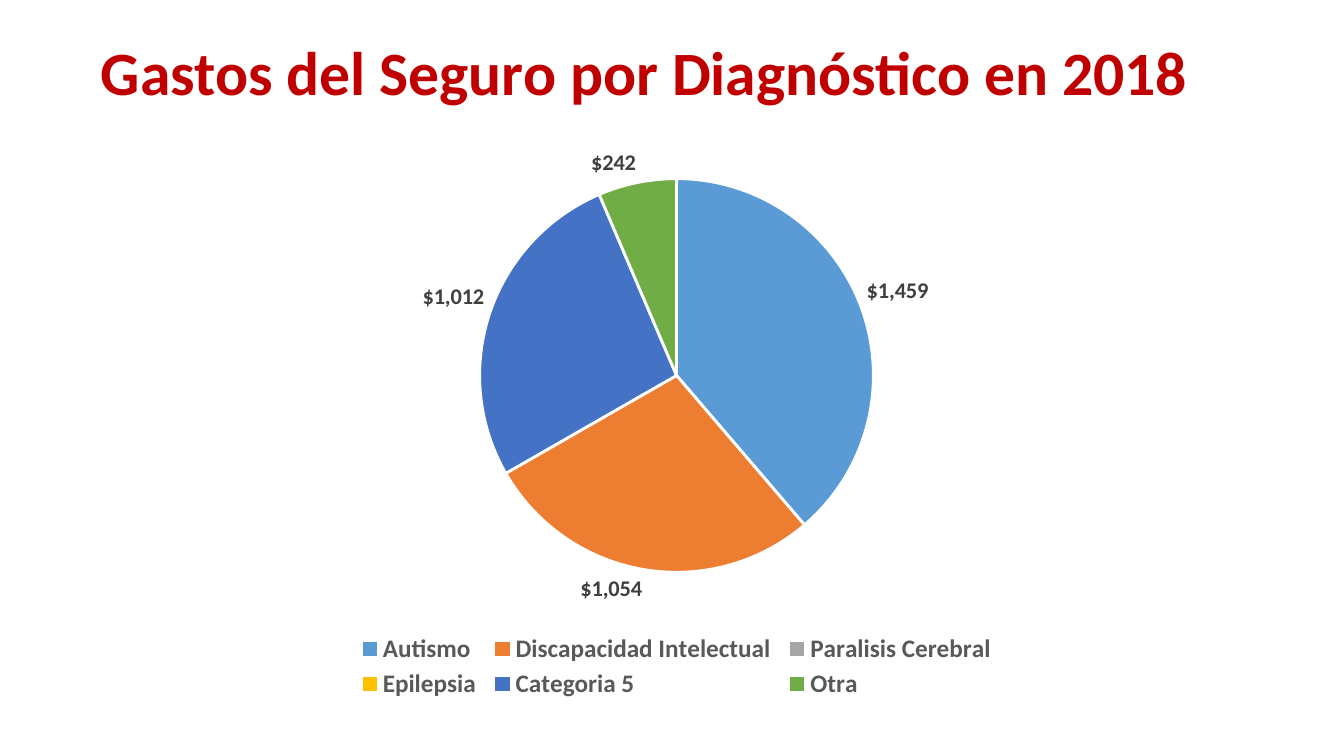
from lxml import etree
from pptx import Presentation
from pptx.chart.data import CategoryChartData
from pptx.dml.color import RGBColor
from pptx.enum.chart import XL_CHART_TYPE, XL_LABEL_POSITION, XL_LEGEND_POSITION
from pptx.enum.text import MSO_ANCHOR, MSO_AUTO_SIZE, PP_ALIGN
from pptx.oxml.ns import qn
from pptx.util import Inches, Pt

PIE = XL_CHART_TYPE.PIE
OUTSIDE = XL_LABEL_POSITION.OUTSIDE_END
BOTTOM = XL_LEGEND_POSITION.BOTTOM
MIDDLE = MSO_ANCHOR.MIDDLE
NO_FIT = MSO_AUTO_SIZE.NONE
LEFT = PP_ALIGN.LEFT

THEME = {
    "title": {"size": 44, "color": "C00000"},
    "labels": {"size": 16, "color": "404040"},
    "legend": {"size": 18, "color": "595959"},
    "border": "FFFFFF",
}
EXPENSES = [
    ("Autismo", 1459, "5B9BD5"),
    ("Discapacidad Intelectual", 1054, "ED7D31"),
    ("Paralisis Cerebral", 0, "A5A5A5"),
    ("Epilepsia", 0, "FFC000"),
    ("Categoria 5", 1012, "4472C4"),
    ("Otra", 242, "70AD47"),
]


def style_font(font, role):
    fmt = {"name": "Calibri", "size": Pt(THEME[role]["size"]), "bold": True}
    for key, value in fmt.items():
        setattr(font, key, value)
    font.color.rgb = RGBColor.from_string(THEME[role]["color"])


def set_layout(parent, index, settings):
    for old in parent.findall(qn("c:layout")):
        parent.remove(old)
    layout = etree.Element(qn("c:layout"))
    manual = etree.SubElement(layout, qn("c:manualLayout"))
    for tag, value in settings.items():
        etree.SubElement(manual, qn(f"c:{tag}"), val=str(value))
    parent.insert(index, layout)


prs = Presentation()
prs.slide_width, prs.slide_height = Inches(13.33), Inches(7.5)
s = prs.slides.add_slide(prs.slide_layouts[5])

title = s.shapes.title
title.left, title.top = Inches(0.9), Inches(0.18)
title.width, title.height = Inches(11.5), Inches(1.14)
tf = title.text_frame
for key, value in {"vertical_anchor": MIDDLE, "word_wrap": True, "auto_size": NO_FIT}.items():
    setattr(tf, key, value)
p = tf.paragraphs[0]
p.alignment, p.line_spacing = LEFT, 0.9
r = p.add_run()
r.text = "Gastos del Seguro por Diagnóstico en 2018"
style_font(r.font, "title")

data = CategoryChartData()
data.categories = [name for name, _, _ in EXPENSES]
data.add_series("Series 1", [amount for _, amount, _ in EXPENSES])
chart = s.shapes.add_chart(
    PIE, Inches(0.74), Inches(1.32), Inches(11.94), Inches(5.66), data
).chart
chart.has_title = False
chart.font.name, chart.font.size = "Calibri", Pt(10)
plot = chart.plots[0]
plot.vary_by_categories = True
for i, (_, _, color) in enumerate(EXPENSES):
    fmt = plot.series[0].points[i].format
    fmt.fill.solid()
    fmt.fill.fore_color.rgb = RGBColor.from_string(color)
    fmt.line.color.rgb = RGBColor.from_string(THEME["border"])
    fmt.line.width = Pt(2)

labels = plot.series[0].data_labels
label_format = {
    "show_value": True,
    "position": OUTSIDE,
    "number_format": '"$"#,##0;;',
    "number_format_is_linked": False,
}
for key, value in label_format.items():
    setattr(labels, key, value)
style_font(labels.font, "labels")

chart.has_legend = True
legend = chart.legend
legend.position, legend.include_in_layout = BOTTOM, False
style_font(legend.font, "legend")

edges = {"xMode": "edge", "yMode": "edge"}
plot_area = chart.element.find(f".//{qn('c:plotArea')}")
legend_area = chart.element.find(f".//{qn('c:legend')}")
set_layout(plot_area, 0, {"layoutTarget": "inner", **edges, "x": 0.33, "y": 0.08, "w": 0.34, "h": 0.69})
set_layout(legend_area, 1, {**edges, "x": 0.23, "y": 0.87, "w": 0.54, "h": 0.13})

prs.save("out.pptx")
